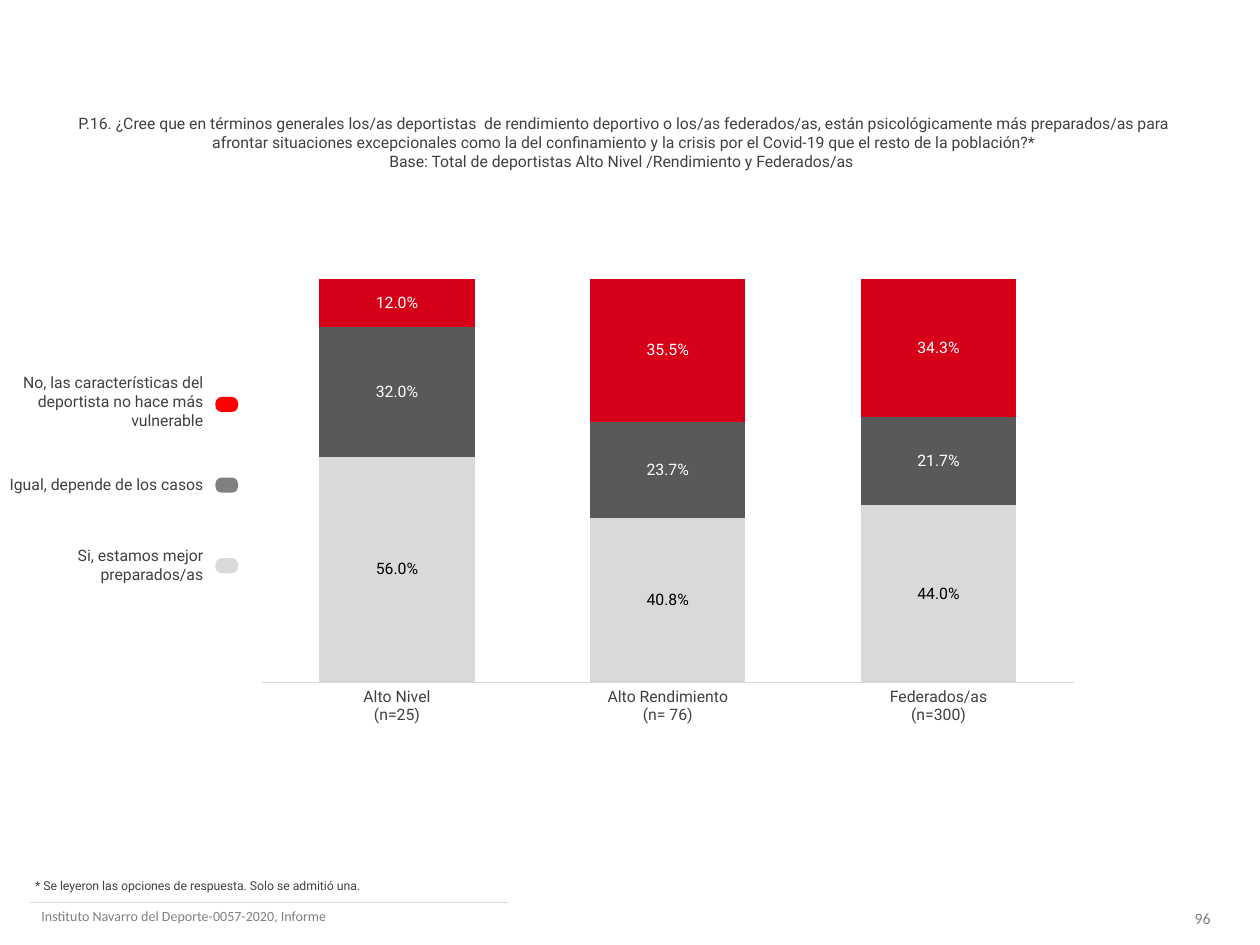
from lxml import etree
from pptx import Presentation
from pptx.chart.data import CategoryChartData
from pptx.dml.color import RGBColor
from pptx.enum.chart import XL_CHART_TYPE as ChartType, XL_LABEL_POSITION as LabelPosition, XL_TICK_MARK as TickMark
from pptx.enum.shapes import MSO_CONNECTOR as Connector, MSO_SHAPE as Shape
from pptx.enum.text import MSO_ANCHOR as Anchor, MSO_AUTO_SIZE as AutoSize, PP_ALIGN as Align
from pptx.oxml.ns import qn
from pptx.util import Inches, Pt

COLORS = {
    "text": "404040",
    "footer": "808080",
    "light": "D9D9D9",
    "dark": "595959",
    "red": "D60019",
    "key_gray": "808080",
    "key_red": "FF0000",
    "black": "000000",
    "white": "FFFFFF",
}


def set_font(font, size, color="text", name="Roboto"):
    values = {"size": Pt(size), "name": name, "bold": False}
    for attribute, value in values.items():
        setattr(font, attribute, value)
    font.color.rgb = RGBColor.from_string(COLORS[color])


def write_text(shape, lines, box, size=9, color="text", name="Roboto",
               align=Align.LEFT, **frame_format):
    shape.left, shape.top, shape.width, shape.height = map(Inches, box)
    frame = shape.text_frame
    frame.text = "\n".join(lines)
    values = {"word_wrap": True, "auto_size": AutoSize.SHAPE_TO_FIT_TEXT,
              "vertical_anchor": Anchor.TOP, **frame_format}
    for attribute, value in values.items():
        setattr(frame, attribute, value)
    for paragraph in frame.paragraphs:
        paragraph.alignment = align
        set_font(paragraph.font, size, color, name)


presentation = Presentation()
presentation.slide_width, presentation.slide_height = Inches(10), Inches(7.5)
slide = presentation.slides.add_slide(presentation.slide_layouts[5])
shapes = slide.shapes

# Question as the title
write_text(
    shapes.title,
    ["P.16. ¿Cree que en términos generales los/as deportistas  de rendimiento deportivo o "
     "los/as federados/as, están psicológicamente más preparados/as para afrontar situaciones "
     "excepcionales como la del confinamiento y la crisis por el Covid-19 que el resto de la "
     "población?*",
     "Base: Total de deportistas Alto Nivel /Rendimiento y Federados/as "],
    (0.44, 0.85, 9.07, 0.56), align=Align.CENTER, margin_left=Inches(0.04),
    margin_right=Inches(0.1), margin_top=Inches(0.05), margin_bottom=Inches(0.05))

# Stacked column chart: name, values, fill, label colour
series_rows = [
    ("Series 1", (0.56, 0.408, 0.44), "light", "black"),
    ("Series 2", (0.32, 0.237, 0.217), "dark", "white"),
    ("Series 3", (0.12, 0.355, 0.343), "red", "white"),
]
chart_data = CategoryChartData(number_format="###0.0%")
chart_data.categories = ["Alto Nivel\n(n=25)", "Alto Rendimiento\n(n= 76)", "Federados/as\n(n=300)"]
for series_name, values, _, _ in series_rows:
    chart_data.add_series(series_name, values)
chart = shapes.add_chart(ChartType.COLUMN_STACKED, Inches(1.44), Inches(1.5),
                         Inches(7.95), Inches(4.59), chart_data).chart
chart.has_legend = False
chart.has_title = False
set_font(chart.font, 9)

plot = chart.plots[0]
for attribute, value in {"gap_width": 74, "overlap": 100, "vary_by_categories": False}.items():
    setattr(plot, attribute, value)
for series, (_, _, fill, label_color) in zip(plot.series, series_rows):
    series.format.fill.solid()
    series.format.fill.fore_color.rgb = RGBColor.from_string(COLORS[fill])
    labels = series.data_labels
    label_format = {"show_value": True, "number_format": "###0.0%",
                    "number_format_is_linked": False, "position": LabelPosition.CENTER}
    for attribute, value in label_format.items():
        setattr(labels, attribute, value)
    set_font(labels.font, 9, label_color)

# Axes
category_axis, value_axis = chart.category_axis, chart.value_axis
category_axis.major_tick_mark = category_axis.minor_tick_mark = TickMark.NONE
category_axis.format.line.color.rgb = RGBColor.from_string(COLORS["light"])
category_axis.format.line.width = Pt(0.75)
set_font(category_axis.tick_labels.font, 9)
axis_format = {"visible": False, "has_major_gridlines": False,
               "minimum_scale": 0, "maximum_scale": 1.2}
for attribute, value in axis_format.items():
    setattr(value_axis, attribute, value)

# Fixed inner plot area
plot_area = chart.element.find(".//" + qn("c:plotArea"))
for old_layout in plot_area.findall(qn("c:layout")):
    plot_area.remove(old_layout)
layout = etree.Element(qn("c:layout"))
manual = etree.SubElement(layout, qn("c:manualLayout"))
plot_layout = {"layoutTarget": "inner", "xMode": "edge", "yMode": "edge",
               "x": "0.08", "y": "0.016", "w": "0.811", "h": "0.838"}
for tag, value in plot_layout.items():
    etree.SubElement(manual, qn("c:" + tag)).set("val", value)
plot_area.insert(0, layout)

# Legend: label, label top, label height, key top, key colour
legend_rows = [
    ("Si, estamos mejor preparados/as", 4.28, 0.4, 4.43, "light"),
    ("Igual, depende de los casos", 3.72, 0.25, 3.79, "key_gray"),
    ("No, las características del deportista no hace más vulnerable", 2.91, 0.56, 3.15, "key_red"),
]
for label, top, height, key_top, color in legend_rows:
    write_text(shapes.add_textbox(0, 0, 0, 0), [label], (-0.11, top, 1.82, height), align=Align.RIGHT)
    key = shapes.add_shape(Shape.ROUNDED_RECTANGLE, Inches(1.71), Inches(key_top),
                           Inches(0.18), Inches(0.12))
    key.adjustments[0] = 0.41
    key.shadow.inherit = False
    key.fill.solid()
    key.fill.fore_color.rgb = RGBColor.from_string(COLORS[color])
    key.line.fill.background()

# Footnote, rule and footer
write_text(shapes.add_textbox(0, 0, 0, 0),
           ["* Se leyeron las opciones de respuesta. Solo se admitió una."],
           (0.18, 6.92, 2.78, 0.22), size=7, word_wrap=False)
rule = shapes.add_connector(Connector.STRAIGHT, Inches(0.24), Inches(7.16), Inches(4.03), Inches(7.16))
rule.line.color.rgb = RGBColor.from_string(COLORS["light"])
rule.line.width = Pt(0.5)
etree.SubElement(rule.element.spPr, qn("a:effectLst"))
write_text(shapes.add_textbox(0, 0, 0, 0), ["Instituto Navarro del Deporte-0057-2020, Informe"],
           (0.23, 7.15, 3.19, 0.24), size=8, color="footer", name="Calibri")
write_text(shapes.add_textbox(0, 0, 0, 0), ["96"], (9.21, 7.16, 0.67, 0.25), color="footer",
           name="Calibri", align=Align.CENTER, vertical_anchor=Anchor.MIDDLE)

presentation.save("out.pptx")
